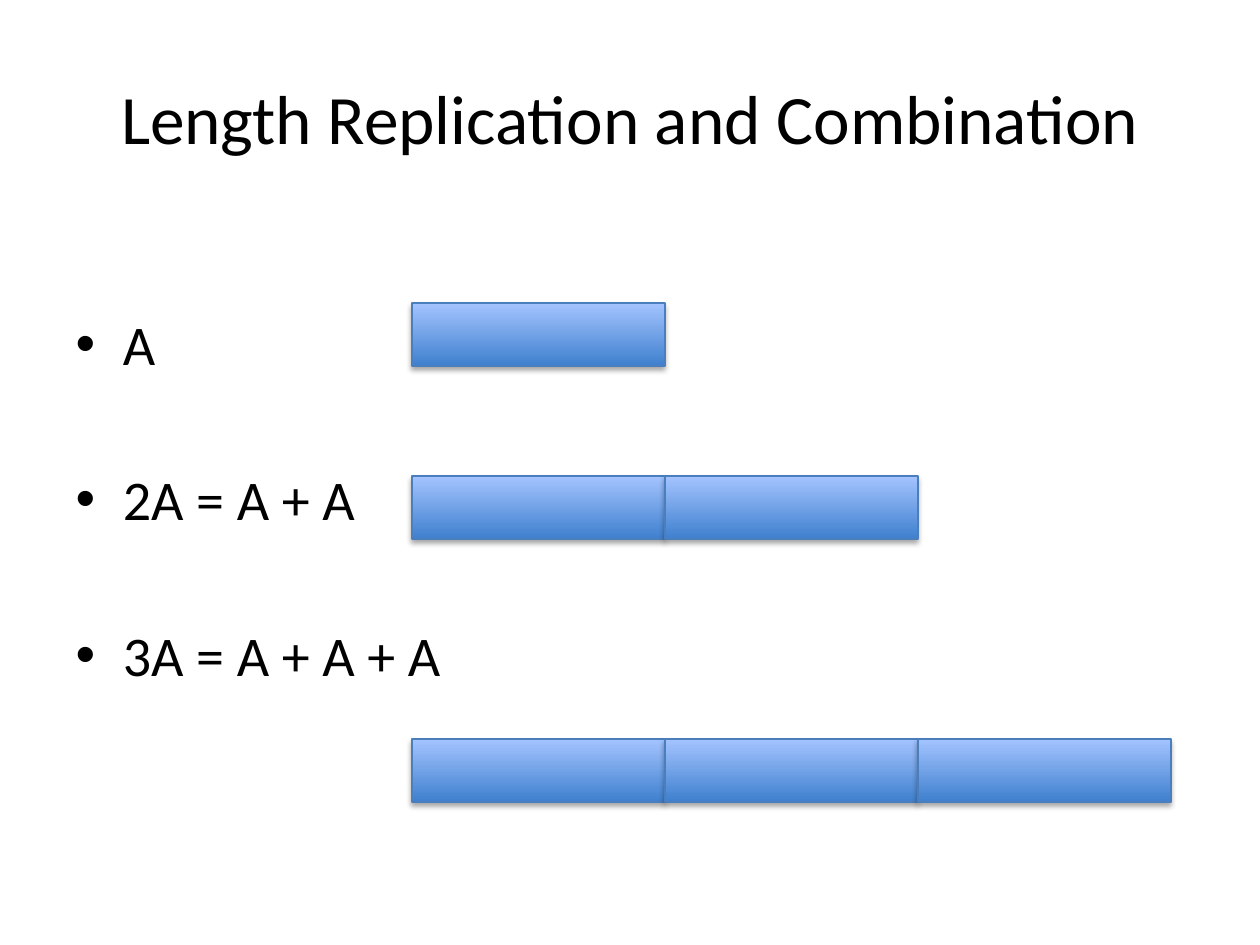
from dataclasses import dataclass

from lxml import etree
from pptx import Presentation
from pptx.dml.color import RGBColor
from pptx.enum.shapes import MSO_SHAPE
from pptx.enum.text import MSO_ANCHOR, MSO_AUTO_SIZE, PP_ALIGN
from pptx.oxml.ns import qn
from pptx.util import Emu, Pt

RECTANGLE = MSO_SHAPE.RECTANGLE
MIDDLE, TOP = MSO_ANCHOR.MIDDLE, MSO_ANCHOR.TOP
CENTER, LEFT = PP_ALIGN.CENTER, PP_ALIGN.LEFT
NO_AUTOFIT = MSO_AUTO_SIZE.NONE

EMU_PER_PX = 914400 / 126
FONT = "Calibri"
BLACK, BAR_DARK, BAR_LIGHT, BAR_LINE = "000000", "3F80CE", "A4C4FF", "4B7EBC"
BAR_LEFT, BAR_WIDTH, BAR_HEIGHT = 412, 253, 63


@dataclass(frozen=True)
class Multiple:
    """A multiple of length A: its formula and the top of its row of bars."""
    formula: str
    count: int
    top: int


MULTIPLES = [
    Multiple("A", 1, 303),
    Multiple("2A = A + A", 2, 476),
    Multiple("3A = A + A + A", 3, 739),
]


def px(length: int) -> Emu:
    return Emu(round(length * EMU_PER_PX))


def color(hex_value: str) -> RGBColor:
    return RGBColor.from_string(hex_value)


def place(shape, left: int, top: int, width: int, height: int) -> None:
    shape.left, shape.top = px(left), px(top)
    shape.width, shape.height = px(width), px(height)


def write(placeholder, text: str, size: float, align, anchor) -> None:
    frame = placeholder.text_frame
    frame.text = text
    frame.word_wrap = True
    frame.auto_size = NO_AUTOFIT
    frame.vertical_anchor = anchor
    for paragraph in frame.paragraphs:
        paragraph.alignment = align
        for run in paragraph.runs:
            run.font.name = FONT
            run.font.size = Pt(size)
            run.font.color.rgb = color(BLACK)


def add_shadow(shape) -> None:
    shape.shadow.inherit = False
    effects = shape._element.spPr.find(qn("a:effectLst"))
    shadow = etree.SubElement(effects, qn("a:outerShdw"), blurRad=str(Pt(3.1)),
                              dist=str(Pt(1.8)), dir="5400000", rotWithShape="0")
    black = etree.SubElement(shadow, qn("a:srgbClr"), val=BLACK)
    etree.SubElement(black, qn("a:alpha"), val="35000")


def add_bar(slide, left: int, top: int) -> None:
    bar = slide.shapes.add_shape(RECTANGLE, px(left), px(top),
                                 px(BAR_WIDTH), px(BAR_HEIGHT))
    bar.fill.gradient()
    bar.fill.gradient_angle = 90
    for stop, position, shade in zip(bar.fill.gradient_stops, (0, 1),
                                     (BAR_DARK, BAR_LIGHT)):
        stop.position = position
        stop.color.rgb = color(shade)
    bar.line.color.rgb = color(BAR_LINE)
    bar.line.width = Pt(0.75)
    add_shadow(bar)


def main() -> None:
    presentation = Presentation()
    presentation.slide_width, presentation.slide_height = px(1260), px(945)
    slide = presentation.slides.add_slide(presentation.slide_layouts[1])

    title, formulas = slide.shapes.title, slide.placeholders[1]
    place(title, 63, 38, 1134, 158)
    write(title, "Length Replication and Combination", 39.6, CENTER, MIDDLE)

    place(formulas, 63, 221, 1134, 624)
    write(formulas, "\n".join(m.formula for m in MULTIPLES), 32, LEFT, TOP)
    formulas.text_frame.margin_top = px(88)
    for index, paragraph in enumerate(formulas.text_frame.paragraphs):
        paragraph.space_before = Pt(50.6 if index else 0)

    for multiple in MULTIPLES:
        for step in range(multiple.count):
            add_bar(slide, BAR_LEFT + step * BAR_WIDTH, multiple.top)

    presentation.save("out.pptx")


if __name__ == "__main__":
    main()
